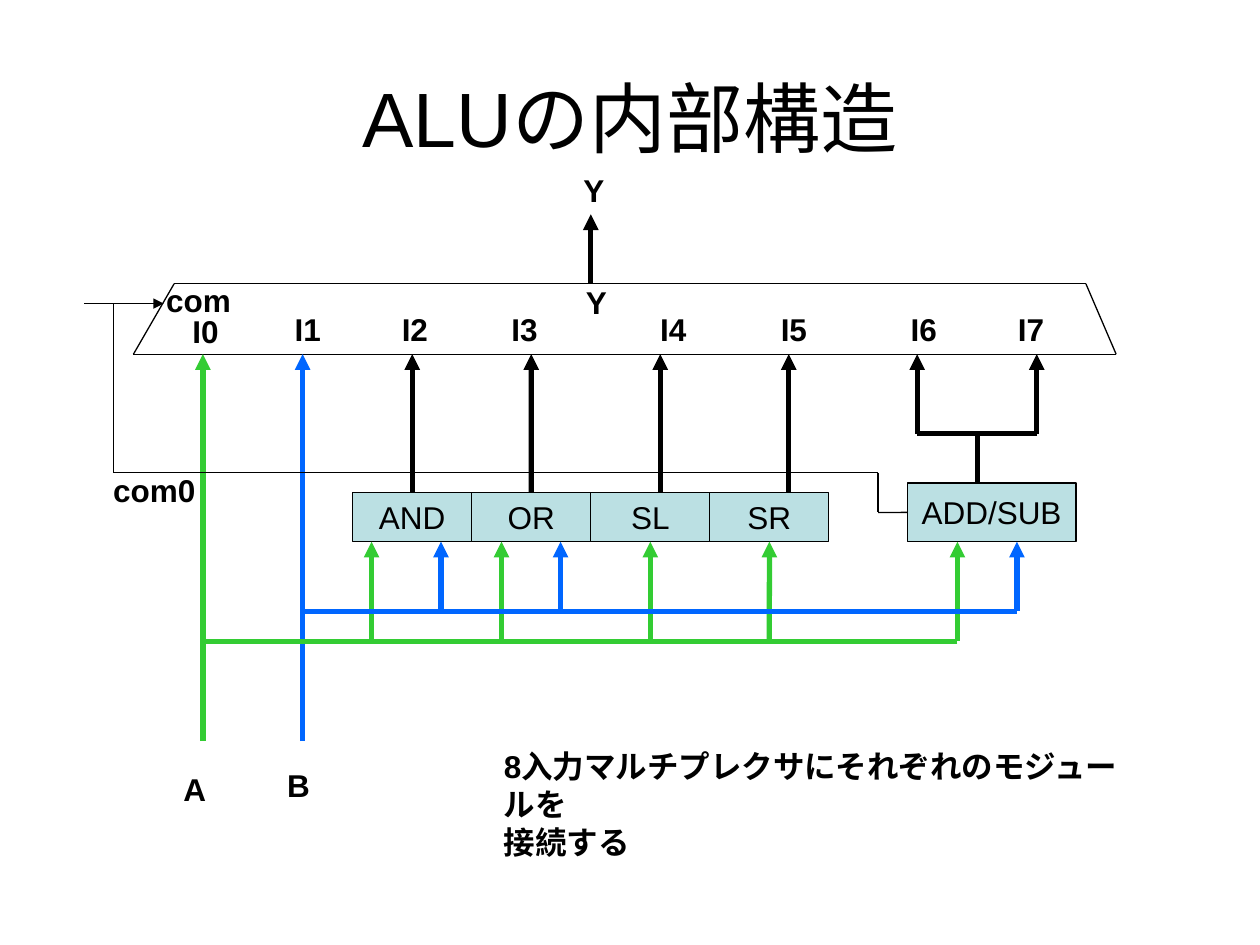
from dataclasses import dataclass
from typing import Optional

import pptx
import pptx.dml.color
import pptx.enum.shapes
import pptx.enum.text
import pptx.oxml
import pptx.oxml.ns
import pptx.util

Cm = pptx.util.Cm
Pt = pptx.util.Pt
PP_ALIGN = pptx.enum.text.PP_ALIGN
ANCHOR = pptx.enum.text.MSO_ANCHOR

COLORS = {"ink": "000000", "a": "33CC33", "b": "0066FF", "module": "BBE0E3"}
TITLE_FONT = {"name": "Arial", "size": Pt(44), "bold": False}
LABEL_FONT = {"name": "Arial", "size": Pt(18), "bold": True}
MODULE_FONT = {"name": "Arial", "size": Pt(18), "bold": False}
THIN, THICK = 0.75, 3

# Shared levels and columns, in centimetres
MUX_TOP, MUX_BOTTOM = 5.72, 7.14
MODULE_TOP, MODULE_BOTTOM = 9.93, 10.92
MODULE_LEFT, MODULE_WIDTH = 7.11, 2.4
ADDER_TOP, ADDER_LEFT, ADDER_WIDTH = 9.74, 18.29, 3.4
ADDER_MIDDLE = (ADDER_TOP + MODULE_BOTTOM) / 2
A_X, B_X, INPUT_Y = 4.09, 6.1, 14.94
A_BUS_Y, B_BUS_Y = 12.93, 12.32
FORK_X, FORK_Y = 19.71, 8.74
COM_X, COM_Y = 2.29, 6.12
COM0_X, COM0_Y = 17.7, 9.53
TOP, LEFT, BOTTOM = 0, 1, 2


@dataclass
class Label:
    text: str
    left: float
    top: float
    width: float = 1.04
    height: float = 1.02


@dataclass
class Module:
    text: str
    left: float
    top: float
    width: float

    @property
    def center(self) -> float:
        return self.left + self.width / 2


@dataclass
class Wire:
    """A straight line; start and end name the (module, side) it is joined to."""
    x1: float
    y1: float
    x2: float
    y2: float
    color: str = "ink"
    width: float = THICK
    arrow: bool = False
    start: Optional[tuple] = None
    end: Optional[tuple] = None


MODULES = [
    Module(text, MODULE_LEFT + index * MODULE_WIDTH, MODULE_TOP, MODULE_WIDTH)
    for index, text in enumerate(["AND", "OR", "SL", "SR"])
] + [Module("ADD/SUB", ADDER_LEFT, ADDER_TOP, ADDER_WIDTH)]
AND, OR, SL, SR, ADDER = MODULES

INPUT_LABELS = [Label("I0", 3.63, 6.17)] + [
    Label(f"I{number}", left, 6.12)
    for number, left in enumerate([5.69, 7.85, 10.06, 13.06, 15.49, 18.11, 20.27], 1)
]
LABELS = INPUT_LABELS + [
    Label("Y", 11.56, 5.59, 0.94),
    Label("Y", 11.51, 3.33, 0.94),
    Label("com", 3.1, 5.54, 1.83),
    Label("com0", 2.03, 9.37, 2.16),
    Label("A", 3.45, 15.39, 0.97),
    Label("B", 5.54, 15.32, 0.97),
]


def polyline(points: list, **options) -> list[Wire]:
    return [Wire(*first, *second, **options) for first, second in zip(points, points[1:])]


def rising_arrows(columns: list, bottom: float, top: float, color: str = "ink") -> list[Wire]:
    return [Wire(x, bottom, x, top, color, arrow=True) for x in columns]


def bus_taps(columns: list, bus_y: float, color: str) -> list[Wire]:
    """Arrows from a bus up to the modules, joined where they meet a middle."""
    taps = rising_arrows(columns, bus_y, MODULE_BOTTOM, color)
    for tap in taps:
        for module in MODULES:
            if abs(tap.x2 - module.center) < 0.05:
                tap.end = (module.text, BOTTOM)
    return taps


def build_wires() -> list[Wire]:
    mux = polyline([(2.69, MUX_BOTTOM), (3.51, MUX_TOP), (21.89, MUX_TOP),
                    (22.5, MUX_BOTTOM), (2.69, MUX_BOTTOM)], width=THIN)
    output = rising_arrows([11.91], MUX_TOP, 4.32)
    inputs = (rising_arrows([A_X], INPUT_Y, MUX_BOTTOM, "a")
              + rising_arrows([B_X], INPUT_Y, MUX_BOTTOM, "b"))
    a_taps = bus_taps([7.49, 10.11, SL.center, SR.center, 19.3], A_BUS_Y, "a")
    b_taps = bus_taps([8.89, 11.3, 20.5], B_BUS_Y, "b")
    buses = [Wire(19.3, A_BUS_Y, A_X, A_BUS_Y, "a"),
             Wire(20.5, B_BUS_Y, B_X, B_BUS_Y, "b")]
    results = rising_arrows([AND.center, OR.center, 13.31, 15.9], MODULE_TOP, MUX_BOTTOM)
    results[0].start, results[1].start = (AND.text, TOP), (OR.text, TOP)
    fork = [Wire(FORK_X, ADDER_TOP, FORK_X, FORK_Y), Wire(18.49, FORK_Y, 20.9, FORK_Y)]
    fork += rising_arrows([18.49, 20.9], FORK_Y, MUX_BOTTOM)
    control = [Wire(1.7, COM_Y, 3.3, COM_Y, width=THIN, arrow=True)]
    control += polyline([(COM_X, COM_Y), (COM_X, COM0_Y), (COM0_X, COM0_Y),
                         (COM0_X, ADDER_MIDDLE), (ADDER_LEFT, ADDER_MIDDLE)], width=THIN)
    control[-1].end = (ADDER.text, LEFT)
    return mux + output + inputs + a_taps + b_taps + buses + results + fork + control


def rgb(color: str) -> pptx.dml.color.RGBColor:
    return pptx.dml.color.RGBColor.from_string(COLORS[color])


def write_text(shape, text: str, font_format: dict, align=PP_ALIGN.LEFT,
               anchor=ANCHOR.TOP, wrap: bool = False) -> None:
    frame = shape.text_frame
    frame.text = text
    frame.word_wrap = wrap
    frame.vertical_anchor = anchor
    for paragraph in frame.paragraphs:
        paragraph.alignment = align
        for run in paragraph.runs:
            run.font.color.rgb = rgb("ink")
            for name, value in font_format.items():
                setattr(run.font, name, value)


def draw_label(slide, label: Label, font_format: dict = LABEL_FONT, **options) -> None:
    box = slide.shapes.add_textbox(Cm(label.left), Cm(label.top),
                                   Cm(label.width), Cm(label.height))
    write_text(box, label.text, font_format, **options)


def draw_module(slide, module: Module):
    shape = slide.shapes.add_shape(
        pptx.enum.shapes.MSO_SHAPE.RECTANGLE, Cm(module.left), Cm(module.top),
        Cm(module.width), Cm(MODULE_BOTTOM - module.top))
    shape.shadow.inherit = False
    shape.fill.solid()
    shape.fill.fore_color.rgb = rgb("module")
    shape.line.color.rgb = rgb("ink")
    shape.line.width = Pt(THIN)
    write_text(shape, module.text, MODULE_FONT, PP_ALIGN.CENTER, ANCHOR.MIDDLE)
    return shape


def draw_wire(slide, wire: Wire, boxes: dict) -> None:
    connector = slide.shapes.add_connector(
        pptx.enum.shapes.MSO_CONNECTOR.STRAIGHT,
        Cm(wire.x1), Cm(wire.y1), Cm(wire.x2), Cm(wire.y2))
    connector.line.color.rgb = rgb(wire.color)
    connector.line.width = Pt(wire.width)
    if wire.arrow:
        line = connector.line._get_or_add_ln()
        line.append(pptx.oxml.parse_xml(
            f'<a:tailEnd {pptx.oxml.ns.nsdecls("a")} type="triangle"/>'))
    connector._element.spPr.append(pptx.oxml.parse_xml(
        f'<a:effectLst {pptx.oxml.ns.nsdecls("a")}/>'))
    for joint, connect in ((wire.start, connector.begin_connect),
                           (wire.end, connector.end_connect)):
        if joint:
            name, side = joint
            connect(boxes[name], side)


def main() -> None:
    presentation = pptx.Presentation()
    presentation.slide_width, presentation.slide_height = Cm(25.4), Cm(19.05)
    slide = presentation.slides.add_slide(presentation.slide_layouts[6])
    draw_label(slide, Label("ALUの内部構造", 1.27, 0.76, 22.86, 3.18), TITLE_FONT,
               align=PP_ALIGN.CENTER, anchor=ANCHOR.MIDDLE, wrap=True)
    boxes = {module.text: draw_module(slide, module) for module in MODULES}
    for wire in build_wires():
        draw_wire(slide, wire, boxes)
    for label in LABELS:
        draw_label(slide, label)
    draw_label(slide, Label("8入力マルチプレクサにそれぞれのモジュールを\n接続する",
                            9.91, 14.94, 13.34, 1.78), wrap=True)
    presentation.save("out.pptx")


if __name__ == "__main__":
    main()
